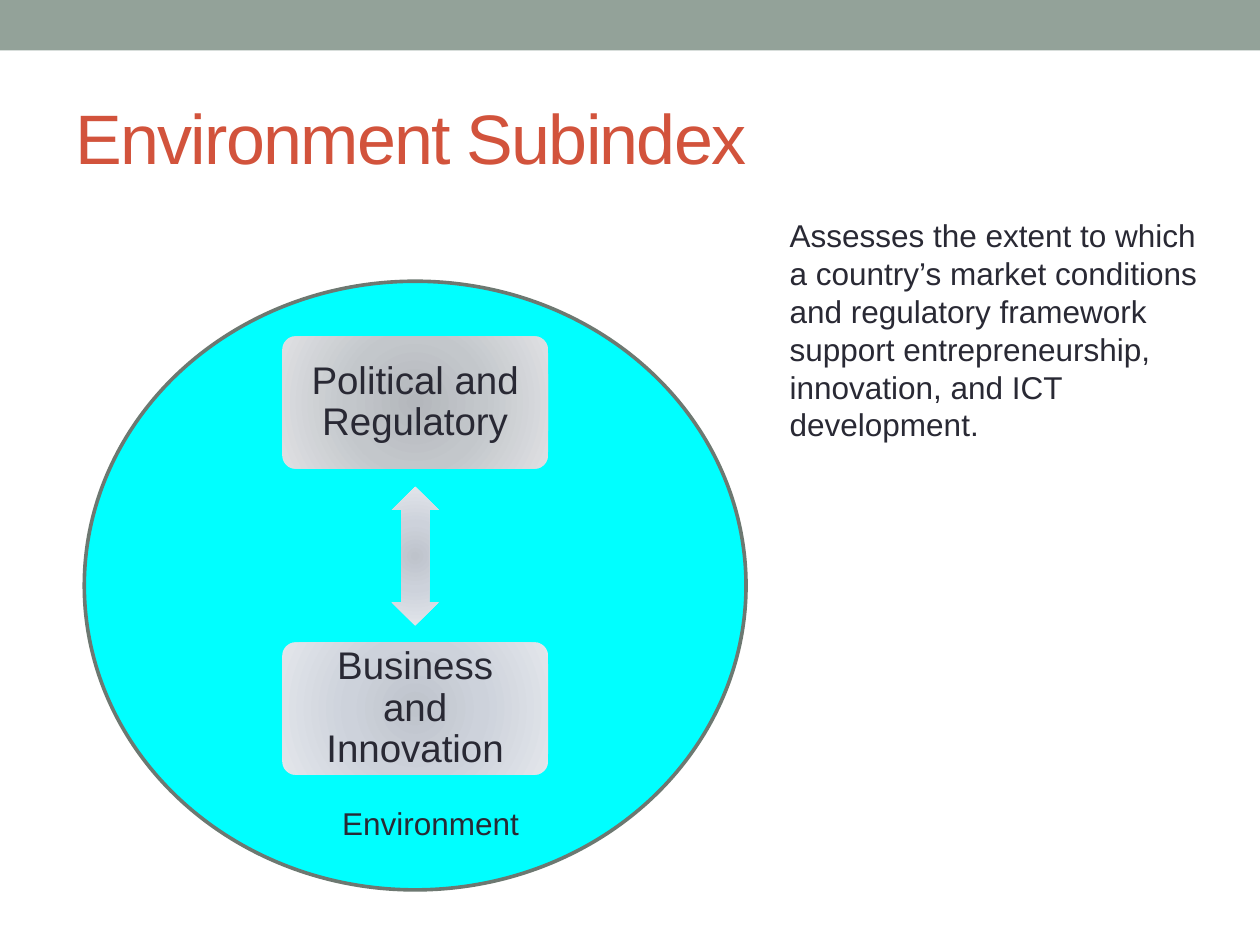
from typing import NamedTuple

from lxml.etree import SubElement
from pptx import Presentation
from pptx.dml.color import RGBColor
from pptx.enum.shapes import MSO_SHAPE
from pptx.enum.text import MSO_ANCHOR, MSO_AUTO_SIZE, PP_ALIGN
from pptx.oxml import parse_xml
from pptx.oxml.ns import nsdecls, qn
from pptx.util import Cm, Pt

FONT = "Arial"
COLORS = {
    "band": "93A299",
    "circle": "00FFFF",
    "outline": "6D7871",
    "title": "D2533C",
    "text": "292934",
}


class Pillar(NamedTuple):
    label: str
    top: float
    arrow_rotation: float
    gradient: tuple[str, str, str]


PILLARS = [
    Pillar("Political and Regulatory", 6.78, 90.1, ("B4B7BC", "C3C7CB", "DFE0E3")),
    Pillar("Business and Innovation", 12.95, 270.1, ("BEC3CB", "CDD2DB", "E3E6EB")),
]


def color(name: str) -> RGBColor:
    return RGBColor.from_string(COLORS[name])


def style_text(paragraph, size: float, name: str = "text", align=PP_ALIGN.LEFT) -> None:
    paragraph.alignment = align
    paragraph.font.name = FONT
    paragraph.font.size = Pt(size)
    paragraph.font.color.rgb = color(name)


def add_plain_shape(slide, preset, left: float, top: float, width: float, height: float):
    shape = slide.shapes.add_shape(preset, Cm(left), Cm(top), Cm(width), Cm(height))
    shape.shadow.inherit = False
    shape.line.fill.background()
    return shape


def fill_radial(shape, gradient: tuple[str, str, str]) -> None:
    stops = "".join(
        f'<a:gs pos="{position}"><a:srgbClr val="{value}"/></a:gs>'
        for position, value in zip((0, 45000, 100000), gradient)
    )
    radial = parse_xml(
        f'<a:gradFill {nsdecls("a")} rotWithShape="1"><a:gsLst>{stops}</a:gsLst>'
        '<a:path path="circle"><a:fillToRect l="100000" t="100000" r="100000" b="100000"/>'
        "</a:path></a:gradFill>"
    )
    shape.fill.background()
    no_fill = shape._element.spPr.find(qn("a:noFill"))
    no_fill.getparent().replace(no_fill, radial)


def add_pillar(slide, pillar: Pillar) -> None:
    box = add_plain_shape(slide, MSO_SHAPE.ROUNDED_RECTANGLE, 5.69, pillar.top, 5.36, 2.67)
    box.adjustments[0] = 0.1
    fill_radial(box, pillar.gradient)
    frame = box.text_frame
    frame.word_wrap = True
    frame.vertical_anchor = MSO_ANCHOR.MIDDLE
    frame.margin_left = frame.margin_right = Cm(0.3)
    frame.margin_top = frame.margin_bottom = Cm(0.3)
    frame.text = pillar.label
    style_text(frame.paragraphs[0], 22, align=PP_ALIGN.CENTER)
    frame.paragraphs[0].line_spacing = 0.9

    arrow = add_plain_shape(slide, MSO_SHAPE.LEFT_RIGHT_ARROW, 6.97, 10.74, 2.8, 0.94)
    arrow.adjustments[0] = 0.6
    arrow.adjustments[1] = 0.5
    arrow.rotation = pillar.arrow_rotation
    fill_radial(arrow, pillar.gradient)


def add_caption(slide, text: str, left: float, top: float, width: float, height: float,
                align=PP_ALIGN.LEFT) -> None:
    frame = slide.shapes.add_textbox(Cm(left), Cm(top), Cm(width), Cm(height)).text_frame
    frame.word_wrap = True
    frame.auto_size = MSO_AUTO_SIZE.SHAPE_TO_FIT_TEXT
    frame.text = text
    style_text(frame.paragraphs[0], 18, align=align)


def main() -> None:
    deck = Presentation()
    deck.slide_width, deck.slide_height = Cm(25.4), Cm(19.05)
    slide = deck.slides.add_slide(deck.slide_layouts[5])

    # Top band
    band = add_plain_shape(slide, MSO_SHAPE.RECTANGLE, 0, 0, 25.4, 1.02)
    band.fill.solid()
    band.fill.fore_color.rgb = color("band")

    # Title
    title = slide.shapes.title
    title.left, title.top, title.width, title.height = Cm(1.27), Cm(1.27), Cm(22.86), Cm(2.97)
    title.text_frame.text = "Environment Subindex"
    title.text_frame.vertical_anchor = MSO_ANCHOR.MIDDLE
    heading = title.text_frame.paragraphs[0]
    style_text(heading, 40, "title")
    heading.runs[0].font._element.set("spc", "-100")

    # Environment circle
    circle = add_plain_shape(slide, MSO_SHAPE.OVAL, 1.7, 5.67, 13.34, 12.27)
    circle.fill.solid()
    circle.fill.fore_color.rgb = color("circle")
    circle.line.color.rgb = color("outline")
    circle.line.width = Pt(2.08)

    # Pillars with the arrows between them
    for pillar in PILLARS:
        add_pillar(slide, pillar)

    # Circle label and description
    add_caption(slide, "Environment", 5.72, 16.08, 5.92, 1.02, PP_ALIGN.CENTER)
    add_caption(
        slide,
        "Assesses the extent to which a country’s market conditions and regulatory "
        "framework support entrepreneurship, innovation, and ICT development.",
        15.67, 4.24, 9.09, 5.64,
    )

    deck.save("out.pptx")


if __name__ == "__main__":
    main()
